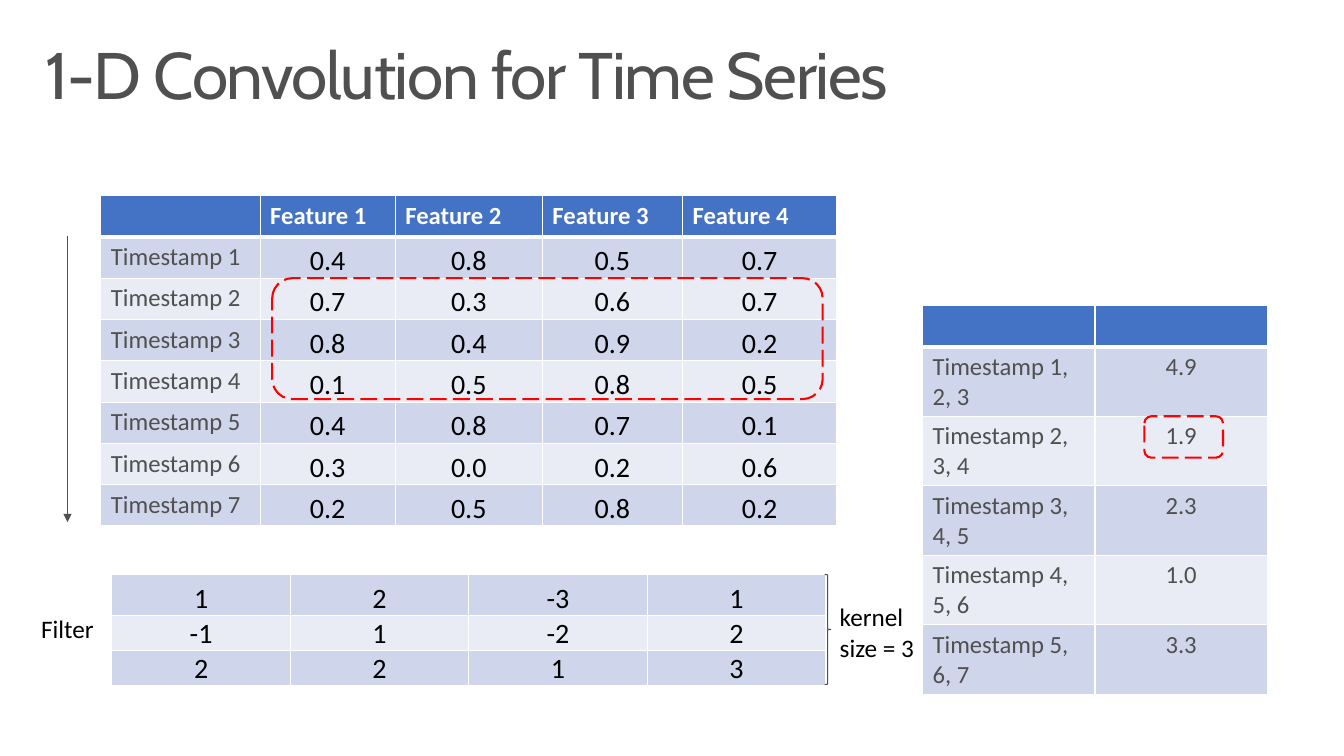
from dataclasses import dataclass

from lxml import etree
from pptx import Presentation
from pptx.dml.color import RGBColor
from pptx.enum.dml import MSO_LINE
from pptx.enum.shapes import MSO_CONNECTOR, MSO_SHAPE
from pptx.enum.text import MSO_ANCHOR, PP_ALIGN
from pptx.oxml.ns import qn
from pptx.shapes.autoshape import Shape
from pptx.shapes.shapetree import SlideShapes
from pptx.table import _Cell
from pptx.text.text import TextFrame
from pptx.util import Inches, Pt

LEFT, CENTER = PP_ALIGN.LEFT, PP_ALIGN.CENTER
TOP, BOTTOM = MSO_ANCHOR.TOP, MSO_ANCHOR.BOTTOM
DASH = MSO_LINE.LONG_DASH
ROUND, BRACE = MSO_SHAPE.ROUNDED_RECTANGLE, MSO_SHAPE.RIGHT_BRACE
STRAIGHT = MSO_CONNECTOR.STRAIGHT


@dataclass(frozen=True)
class Theme:
    head: str = "4472C4"
    bands: tuple[str, str] = ("CFD5EA", "E9EBF5")
    white: str = "FFFFFF"
    black: str = "000000"
    gray: str = "505050"
    red: str = "FF0000"
    body: str = "Calibri"
    display: str = "Cabin"
    title: float = 47
    value: float = 20
    note: float = 18
    label: float = 17.6


THEME = Theme()


@dataclass(frozen=True)
class Grid:
    left: float
    top: float
    cols: list[float]
    rows: list[float]
    cells: list[list[str]]
    header: bool = True
    tight: bool = True


@dataclass(frozen=True)
class Note:
    left: float
    top: float
    width: float
    height: float
    lines: list[str]


@dataclass(frozen=True)
class Mark:
    left: float
    top: float
    width: float
    height: float
    kind: MSO_SHAPE = ROUND
    color: str = THEME.red
    weight: float = 1.5
    dash: MSO_LINE | None = DASH


FEATURES = [
    ["", *(f"Feature {n}" for n in range(1, 5))],
    ["Timestamp 1", "0.4", "0.8", "0.5", "0.7"],
    ["Timestamp 2", "0.7", "0.3", "0.6", "0.7"],
    ["Timestamp 3", "0.8", "0.4", "0.9", "0.2"],
    ["Timestamp 4", "0.1", "0.5", "0.8", "0.5"],
    ["Timestamp 5", "0.4", "0.8", "0.7", "0.1"],
    ["Timestamp 6", "0.3", "0.0", "0.2", "0.6"],
    ["Timestamp 7", "0.2", "0.5", "0.8", "0.2"],
]
FILTER = [["1", "2", "-3", "1"], ["-1", "1", "-2", "2"], ["2", "2", "1", "3"]]
SUMS = ["4.9", "1.9", "2.3", "1.0", "3.3"]
RESULT = [["", ""]] + [
    [f"Timestamp {n}, {n + 1}, {n + 2}", total] for n, total in enumerate(SUMS, 1)
]
GRIDS = [
    Grid(1, 1.94, [1.58, 1.34, 1.46, 1.39, 1.53], [0.41] * 8, FEATURES),
    Grid(1.11, 5.7, [1.77] * 4, [0.41, 0.34, 0.34], FILTER, header=False),
    Grid(9.15, 3.03, [1.71] * 2, [0.41] + [0.69] * 5, RESULT, tight=False),
]
NOTES = [
    Note(0.31, 6.04, 0.73, 0.4, ["Filter"]),
    Note(8.23, 5.92, 0.95, 0.71, ["kernel", "size = 3"]),
]
MARKS = [
    Mark(2.7, 2.76, 5.46, 1.2),
    Mark(11.35, 4.13, 0.78, 0.41),
    Mark(8.18, 5.7, 0.06, 1.09, BRACE, THEME.gray, 0.75, None),
]


def paint(color: str) -> RGBColor:
    return RGBColor.from_string(color)


def write(frame: TextFrame, lines: list[str], *, size: float, color: str,
          font: str = THEME.body, bold: bool = False, align: PP_ALIGN = LEFT,
          spacing: float | None = None, track: int | None = None) -> None:
    for index, line in enumerate(lines):
        para = frame.add_paragraph() if index else frame.paragraphs[0]
        para.alignment = align
        para.line_spacing = spacing
        run = para.add_run()
        run.text = line
        run.font.name, run.font.size, run.font.bold = font, Pt(size), bold
        run.font.color.rgb = paint(color)
        if track is not None:
            run.font._element.set("spc", str(track))


def frame_cell(cell: _Cell, row: int, header: bool) -> None:
    props = cell._tc.get_or_add_tcPr()
    for side in "LRTB":
        thick = header and (row, side) in ((0, "B"), (1, "T"))
        line = etree.SubElement(props, qn(f"a:ln{side}"), w=str(Pt(3 if thick else 1)))
        fill = etree.SubElement(line, qn("a:solidFill"))
        etree.SubElement(fill, qn("a:srgbClr"), val=THEME.white)


def fill_cell(cell: _Cell, text: str, row: int, col: int, grid: Grid) -> None:
    head = grid.header and row == 0
    label = grid.header and col == 0
    value = not head and not label
    tight = value and grid.tight
    frame_cell(cell, row, grid.header)
    cell.fill.solid()
    band = THEME.bands[(row - grid.header) % 2]
    cell.fill.fore_color.rgb = paint(THEME.head if head else band)
    if tight:
        cell.margin_left = cell.margin_right = cell.margin_top = Inches(0.01)
        cell.margin_bottom = 0
        cell.vertical_anchor = BOTTOM
    if text:
        color = THEME.white if head else THEME.black if tight else THEME.gray
        write(cell.text_frame, [text], size=THEME.value if tight else THEME.label,
              color=color, bold=head, align=CENTER if value else LEFT)


def draw_grid(shapes: SlideShapes, grid: Grid) -> None:
    table = shapes.add_table(
        len(grid.rows), len(grid.cols), Inches(grid.left), Inches(grid.top),
        Inches(sum(grid.cols)), Inches(sum(grid.rows))).table
    table.first_row = grid.header
    table.horz_banding = False
    for column, width in zip(table.columns, grid.cols):
        column.width = Inches(width)
    for line, height in zip(table.rows, grid.rows):
        line.height = Inches(height)
    for row, texts in enumerate(grid.cells):
        for col, text in enumerate(texts):
            fill_cell(table.cell(row, col), text, row, col, grid)


def add_box(shapes: SlideShapes, note: Note) -> Shape:
    return shapes.add_textbox(Inches(note.left), Inches(note.top),
                              Inches(note.width), Inches(note.height))


def draw_title(shapes: SlideShapes) -> None:
    note = Note(0.29, 0.32, 12.75, 0.98, ["1-D Convolution for Time Series"])
    frame = add_box(shapes, note).text_frame
    frame.word_wrap = True
    frame.vertical_anchor = TOP
    frame.margin_left = frame.margin_right = Inches(0.16)
    frame.margin_top = frame.margin_bottom = Inches(0.1)
    write(frame, note.lines, size=THEME.title, color=THEME.gray,
          font=THEME.display, spacing=0.9, track=-100)


def draw_note(shapes: SlideShapes, note: Note) -> None:
    frame = add_box(shapes, note).text_frame
    frame.word_wrap = False
    write(frame, note.lines, size=THEME.note, color=THEME.black)


def draw_mark(shapes: SlideShapes, mark: Mark) -> None:
    shape = shapes.add_shape(mark.kind, Inches(mark.left), Inches(mark.top),
                             Inches(mark.width), Inches(mark.height))
    shape.shadow.inherit = False
    shape.fill.background()
    shape.line.color.rgb = paint(mark.color)
    shape.line.width = Pt(mark.weight)
    if mark.dash is not None:
        shape.line.dash_style = mark.dash


def draw_arrow(shapes: SlideShapes) -> None:
    arrow = shapes.add_connector(STRAIGHT, Inches(0.67), Inches(2.34),
                                 Inches(0.67), Inches(5.18))
    arrow.line.color.rgb = paint(THEME.gray)
    arrow.line.width = Pt(0.75)
    etree.SubElement(arrow.line._get_or_add_ln(), qn("a:tailEnd"), type="triangle")
    etree.SubElement(arrow._element.spPr, qn("a:effectLst"))


def main() -> None:
    """Build the time series convolution slide."""
    deck = Presentation()
    deck.slide_width, deck.slide_height = Inches(13.33), Inches(7.5)
    shapes = deck.slides.add_slide(deck.slide_layouts[6]).shapes
    draw_title(shapes)
    for grid in GRIDS:
        draw_grid(shapes, grid)
    for note in NOTES:
        draw_note(shapes, note)
    for mark in MARKS:
        draw_mark(shapes, mark)
    draw_arrow(shapes)
    deck.save("out.pptx")


if __name__ == "__main__":
    main()
